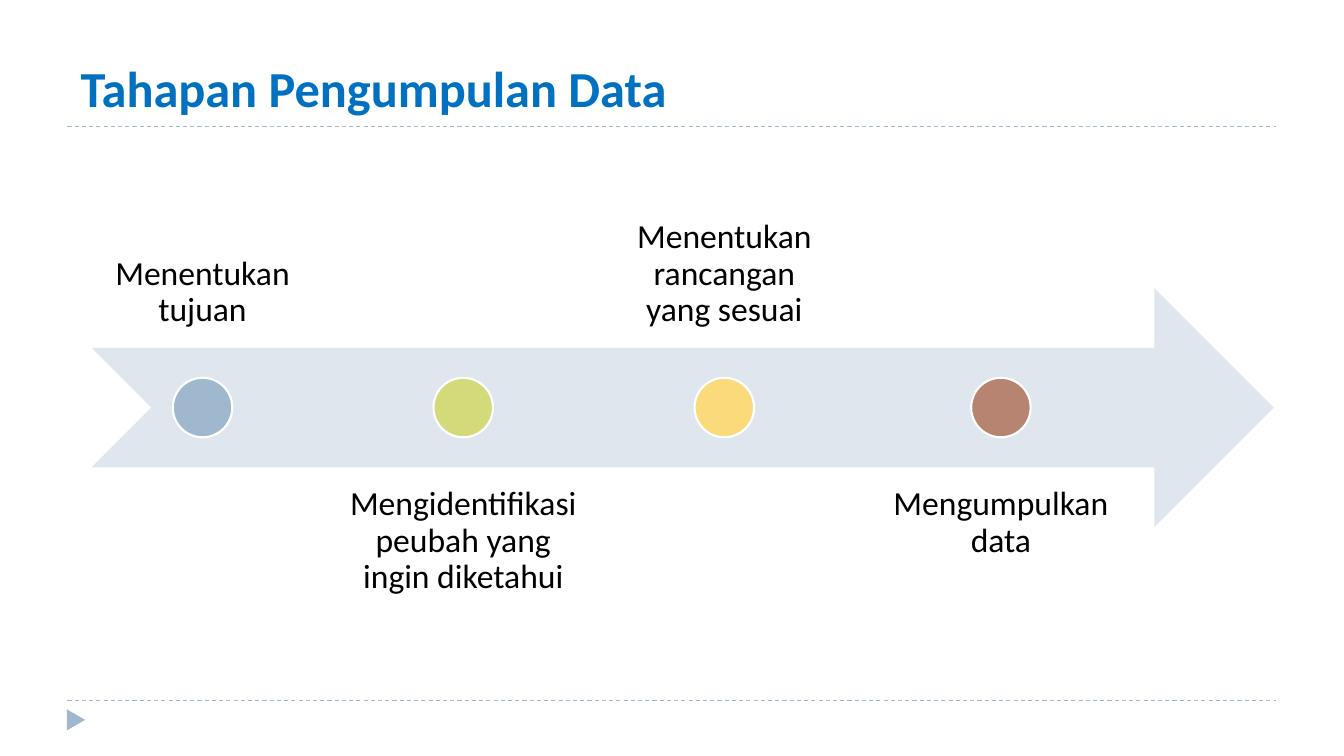
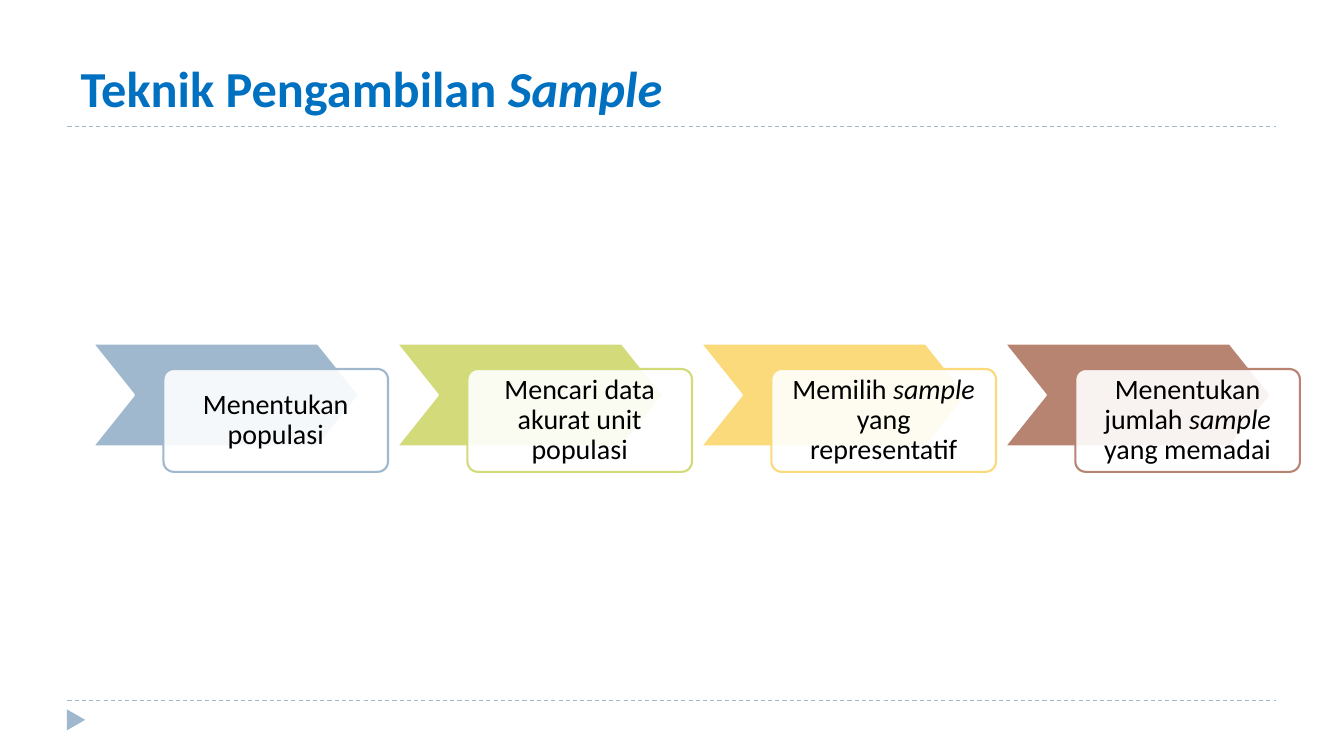
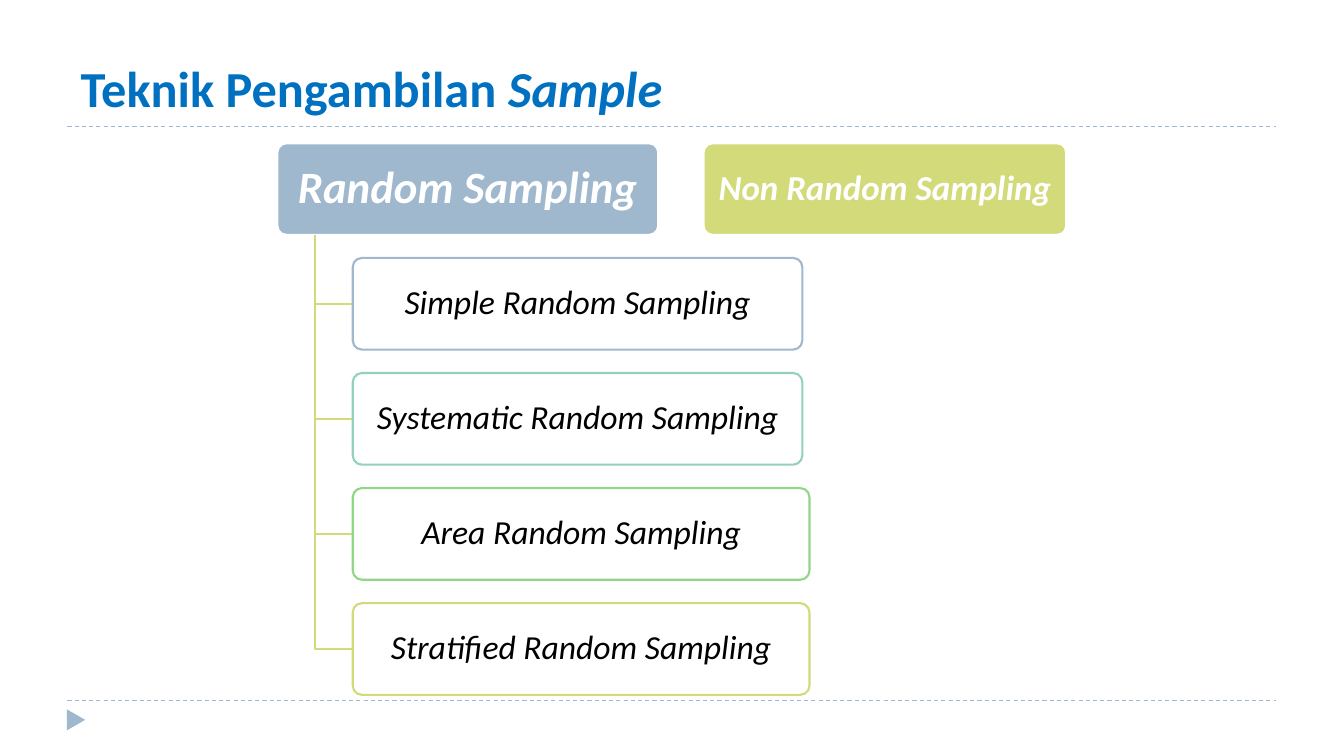
"""Build three slides on data collection stages and sampling techniques."""
from lxml.etree import SubElement
from pptx import Presentation
from pptx.dml.color import RGBColor
from pptx.enum.dml import MSO_LINE
from pptx.enum.shapes import MSO_CONNECTOR, MSO_SHAPE
from pptx.enum.text import MSO_ANCHOR, MSO_AUTO_SIZE, PP_ALIGN
from pptx.oxml.ns import qn
from pptx.util import Cm, Pt

FONT = "Calibri"
TITLE_BLUE = RGBColor(0x00, 0x70, 0xC0)
STEEL = RGBColor(0x9F, 0xB8, 0xCD)
LIME = RGBColor(0xD2, 0xDA, 0x7A)
YELLOW = RGBColor(0xFA, 0xDA, 0x7A)
BROWN = RGBColor(0xB8, 0x84, 0x72)
TEAL = RGBColor(0x93, 0xD1, 0xBC)
GREEN = RGBColor(0x91, 0xD5, 0x87)
PALE = RGBColor(0xDF, 0xE6, 0xED)
WHITE = RGBColor(0xFF, 0xFF, 0xFF)
BLACK = RGBColor(0x00, 0x00, 0x00)


def draw(slide, kind, box, fill, line=None, adjustment=None, opacity=100):
    """Add a preset shape; box is left, top, width and height in centimetres."""
    shape = slide.shapes.add_shape(kind, *(Cm(length) for length in box))
    shape.shadow.inherit = False
    shape.fill.solid()
    shape.fill.fore_color.rgb = fill
    if opacity < 100:
        color = shape.element.find(".//" + qn("a:srgbClr"))
        SubElement(color, qn("a:alpha"), val=str(opacity * 1000))
    if line is None:
        shape.line.fill.background()
    else:
        shape.line.color.rgb = line
        shape.line.width = Pt(1.5)
    if adjustment is not None:
        shape.adjustments[0] = adjustment
    return shape


def write(shape, text, size, color, insets, anchor=MSO_ANCHOR.MIDDLE,
          alignment=PP_ALIGN.CENTER, spacing=0.9, bold=False):
    """Fill a shape with one paragraph; asterisks enclose italic words."""
    frame = shape.text_frame
    frame.word_wrap = True
    frame.auto_size = MSO_AUTO_SIZE.NONE
    frame.vertical_anchor = anchor
    frame.margin_left = frame.margin_right = Cm(insets[0])
    frame.margin_top = frame.margin_bottom = Cm(insets[1])
    paragraph = frame.paragraphs[0]
    paragraph.alignment = alignment
    paragraph.line_spacing = spacing
    paragraph.font.name = FONT
    paragraph.font.size = Pt(size)
    paragraph.font.bold = bold
    paragraph.font.color.rgb = color
    for index, part in enumerate(text.split("*")):
        if part:
            run = paragraph.add_run()
            run.text = part
            run.font.italic = index % 2 == 1


presentation = Presentation()
presentation.slide_width = Cm(33.87)
presentation.slide_height = Cm(19.05)

slides = []
for title in ("Tahapan Pengumpulan Data",
              "Teknik Pengambilan *Sample*",
              "Teknik Pengambilan *Sample*"):
    slide = presentation.slides.add_slide(presentation.slide_layouts[5])
    for rule_top in (17.65, 3.18):
        rule = slide.shapes.add_connector(
            MSO_CONNECTOR.STRAIGHT, Cm(1.7), Cm(rule_top), Cm(32.16), Cm(rule_top))
        rule.line.color.rgb = STEEL
        rule.line.width = Pt(0.75)
        rule.line.dash_style = MSO_LINE.DASH
        SubElement(rule.element.spPr, qn("a:effectLst"))
    marker = draw(slide, MSO_SHAPE.ISOSCELES_TRIANGLE, (1.65, 17.91, 0.53, 0.46), STEEL)
    marker.rotation = 90
    heading = slide.shapes.title
    heading.left, heading.top = Cm(1.73), Cm(0.38)
    heading.width, heading.height = Cm(30.48), Cm(2.74)
    write(heading, title, 36, TITLE_BLUE, (0.3, 0.15), MSO_ANCHOR.BOTTOM,
          PP_ALIGN.LEFT, 1.0, bold=True)
    slides.append(slide)
stages_slide, steps_slide, methods_slide = slides

draw(stages_slide, MSO_SHAPE.NOTCHED_RIGHT_ARROW, (2.31, 7.26, 29.79, 6.02), PALE)
stages = [
    ("Menentukan tujuan", 5.49, STEEL),
    ("Mengidentifikasi peubah yang ingin diketahui", 7.09, LIME),
    ("Menentukan rancangan yang sesuai", 5.51, YELLOW),
    ("Mengumpulkan data", 7.87, BROWN),
]
dot_size = 1.5
stage_left = 2.36
for index, (text, width, color) in enumerate(stages):
    above = index % 2 == 0
    label = stages_slide.shapes.add_textbox(
        Cm(stage_left), Cm(2.74 if above else 11.79), Cm(width), Cm(6.02))
    write(label, text, 24, BLACK, (0.48, 0.48),
          MSO_ANCHOR.BOTTOM if above else MSO_ANCHOR.TOP)
    dot_left = stage_left + (width - dot_size) / 2
    draw(stages_slide, MSO_SHAPE.OVAL, (dot_left, 9.52, dot_size, dot_size), color, WHITE)
    stage_left += width + 0.28

steps = [
    ("Menentukan populasi", STEEL),
    ("Mencari data akurat unit populasi", LIME),
    ("Memilih *sample* yang representatif", YELLOW),
    ("Menentukan jumlah *sample* yang memadai", BROWN),
]
for index, (text, color) in enumerate(steps):
    left = 2.34 + index * 7.66
    draw(steps_slide, MSO_SHAPE.CHEVRON, (left, 8.66, 6.71, 2.59), color, WHITE, 0.4)
    card = draw(steps_slide, MSO_SHAPE.ROUNDED_RECTANGLE, (left + 1.78, 9.3, 5.66, 2.59),
                WHITE, color, 0.1, 90)
    write(card, text, 20, BLACK, (0.41, 0.41))

box_height = 2.31
head_top = 3.61
families = [
    ("*Random Sampling*", 6.99, 9.6, 32, STEEL),
    ("*Non Random Sampling*", 17.73, 9.14, 25, LIME),
]
for text, left, width, size, color in families:
    head = draw(methods_slide, MSO_SHAPE.ROUNDED_RECTANGLE,
                (left, head_top, width, box_height), color, WHITE, 0.1)
    write(head, text, size, WHITE, (0.13, 0.08), bold=True)

methods = [
    ("*Simple Random Sampling*", 11.33, STEEL),
    ("*Systematic Random Sampling*", 11.33, TEAL),
    ("*Area Random Sampling*", 11.51, GREEN),
    ("*Stratified Random Sampling*", 11.51, LIME),
]
trunk_left, method_left = 7.95, 8.89
for index, (text, width, color) in enumerate(methods):
    top = 6.5 + index * 2.9
    middle = Cm(top + box_height / 2)
    builder = methods_slide.shapes.build_freeform(Cm(trunk_left), Cm(head_top + box_height))
    builder.add_line_segments(
        [(Cm(trunk_left), middle), (Cm(method_left), middle)], close=False)
    branch = builder.convert_to_shape()
    branch.shadow.inherit = False
    branch.fill.background()
    branch.line.color.rgb = LIME
    branch.line.width = Pt(1.5)
    method = draw(methods_slide, MSO_SHAPE.ROUNDED_RECTANGLE,
                  (method_left, top, width, box_height), WHITE, color, 0.1, 90)
    write(method, text, 24, BLACK, (0.13, 0.08))

presentation.save("out.pptx")
